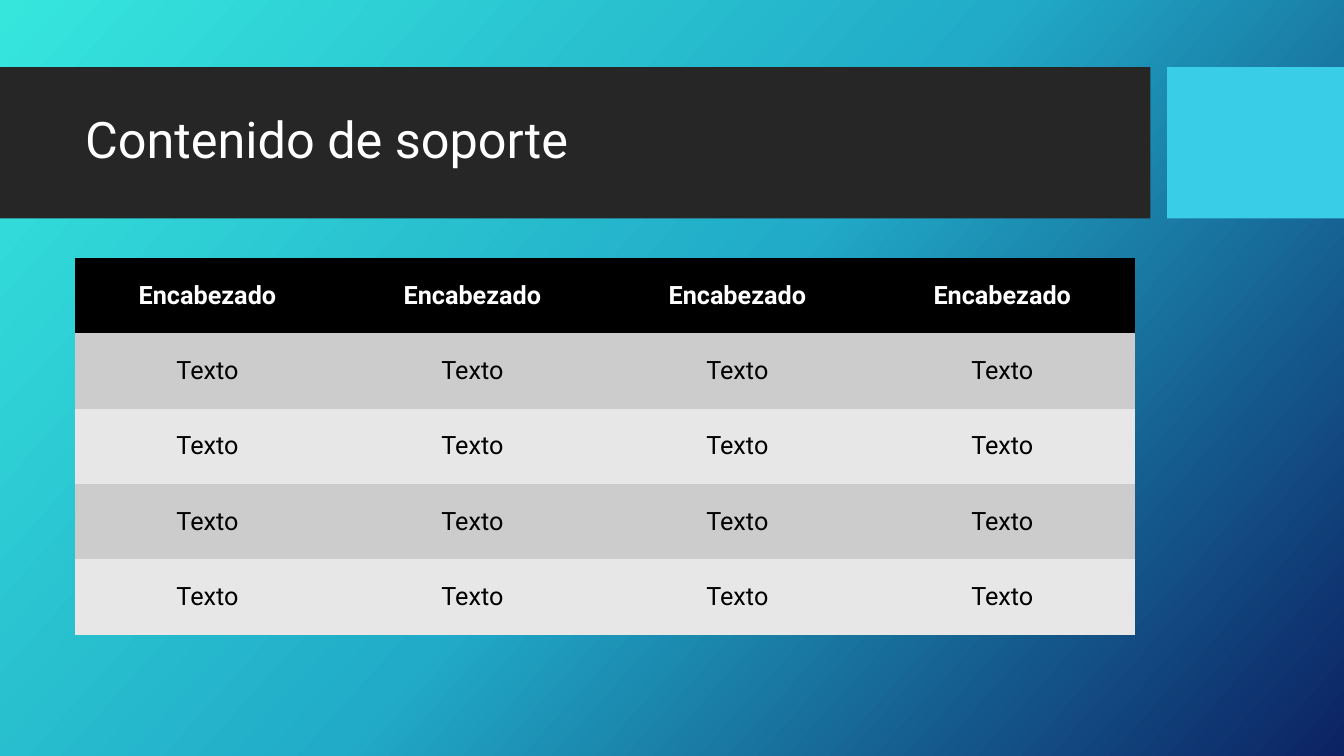
from copy import deepcopy
from dataclasses import dataclass

from pptx import Presentation
from pptx.dml.color import RGBColor
from pptx.enum.shapes import MSO_SHAPE as Shape
from pptx.enum.text import MSO_ANCHOR as Anchor, MSO_AUTO_SIZE as AutoSize, PP_ALIGN as Align
from pptx.util import Pt

TITLE = "Contenido de soporte"
COLUMNS, BODY_ROWS = 4, 4
ROWS = [["Encabezado"] * COLUMNS] + [["Texto"] * COLUMNS] * BODY_ROWS


@dataclass(frozen=True)
class Theme:
    font: str = "Roboto"
    title_size: int = 36
    table_size: int = 18
    white: str = "FFFFFF"
    black: str = "000000"
    band: str = "262626"
    accent: str = "39CDE7"
    stripes: tuple = ("CCCCCC", "E7E7E7")
    gradient: tuple = ("36E6DD", "21ABC8", "0C2263")
    gradient_angle: int = 42
    plain_table: str = "{2D5ABB26-0587-4C30-8999-92F81FD0307C}"


THEME = Theme()
SLIDE_W, SLIDE_H = 960, 540
BAND_TOP, BAND_H = 48, 108
BAND_W, ACCENT_LEFT = 821.8, 833.6
CONTENT_LEFT, CONTENT_W = 53.6, 757
TITLE_TOP, TITLE_H = 59, 85
TABLE_TOP, ROW_H = 184.2, 53.85


def rgb(value):
    return RGBColor.from_string(value)


def paint_background(s):
    fill = s.background.fill
    fill.gradient()
    fill.gradient_angle = 360 - THEME.gradient_angle
    last = fill.gradient_stops[-1]._gs
    last.addprevious(deepcopy(last))
    stops = list(fill.gradient_stops)
    for i, (stop, color) in enumerate(zip(stops, THEME.gradient)):
        stop.position = i / (len(stops) - 1)
        stop.color.rgb = rgb(color)


def add_block(s, left, width, color):
    sp = s.shapes.add_shape(Shape.RECTANGLE, Pt(left), Pt(BAND_TOP), Pt(width), Pt(BAND_H))
    sp.shadow.inherit = False
    sp.fill.solid()
    sp.fill.fore_color.rgb = rgb(color)
    sp.line.fill.background()


def write(tf, text, *, size, color, bold=False, align=Align.LEFT, spacing=None):
    p = tf.paragraphs[0]
    p.alignment = align
    p.line_spacing = spacing
    r = p.add_run()
    r.text = text
    r.font.name, r.font.size, r.font.bold = THEME.font, Pt(size), bold
    r.font.color.rgb = rgb(color)


def place_title(s):
    title = s.shapes.title
    title.left, title.top = Pt(CONTENT_LEFT), Pt(TITLE_TOP)
    title.width, title.height = Pt(CONTENT_W), Pt(TITLE_H)
    tf = title.text_frame
    tf.word_wrap, tf.auto_size = True, AutoSize.NONE
    tf.vertical_anchor = Anchor.MIDDLE
    write(tf, TITLE, size=THEME.title_size, color=THEME.white, spacing=0.9)
    # The title stands in front of the dark band.
    s.shapes._spTree.append(title._element)


def add_content_table(s):
    frame = s.shapes.add_table(len(ROWS), COLUMNS, Pt(CONTENT_LEFT), Pt(TABLE_TOP),
                               Pt(CONTENT_W), Pt(ROW_H * len(ROWS)))
    table = frame.table
    table._tbl.tblPr[0].text = THEME.plain_table
    table.horz_banding = False
    for i, texts in enumerate(ROWS):
        header = i == 0
        fill = THEME.black if header else THEME.stripes[(i - 1) % 2]
        for j, text in enumerate(texts):
            cell = table.cell(i, j)
            cell.fill.solid()
            cell.fill.fore_color.rgb = rgb(fill)
            cell.vertical_anchor = Anchor.MIDDLE
            write(cell.text_frame, text, size=THEME.table_size, bold=header,
                  color=THEME.white if header else THEME.black, align=Align.CENTER)


def main():
    prs = Presentation()
    prs.slide_width, prs.slide_height = Pt(SLIDE_W), Pt(SLIDE_H)
    s = prs.slides.add_slide(prs.slide_layouts.get_by_name("Title Only"))
    paint_background(s)
    add_block(s, 0, BAND_W, THEME.band)
    add_block(s, ACCENT_LEFT, SLIDE_W - ACCENT_LEFT, THEME.accent)
    place_title(s)
    add_content_table(s)
    prs.save("out.pptx")


if __name__ == "__main__":
    main()
